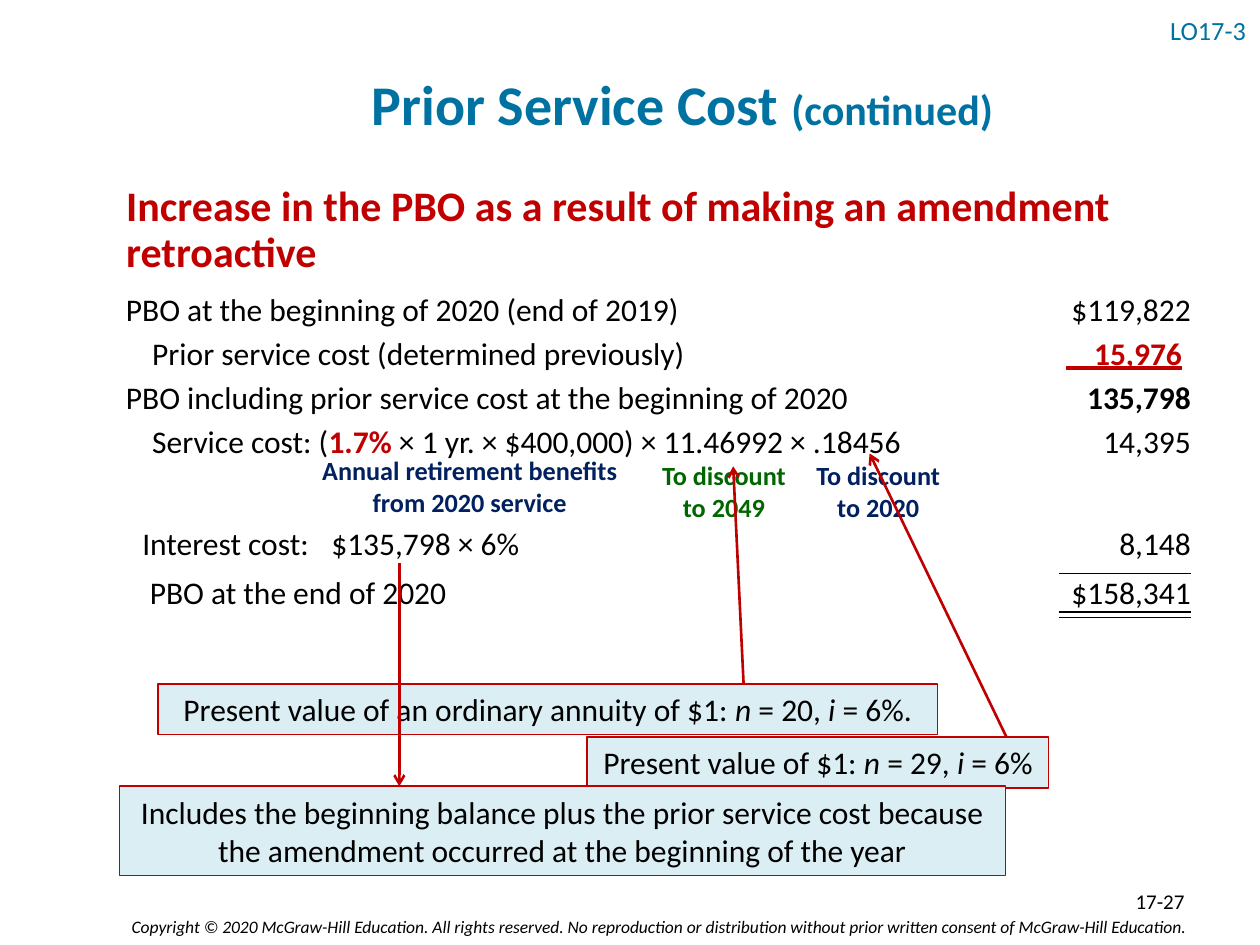
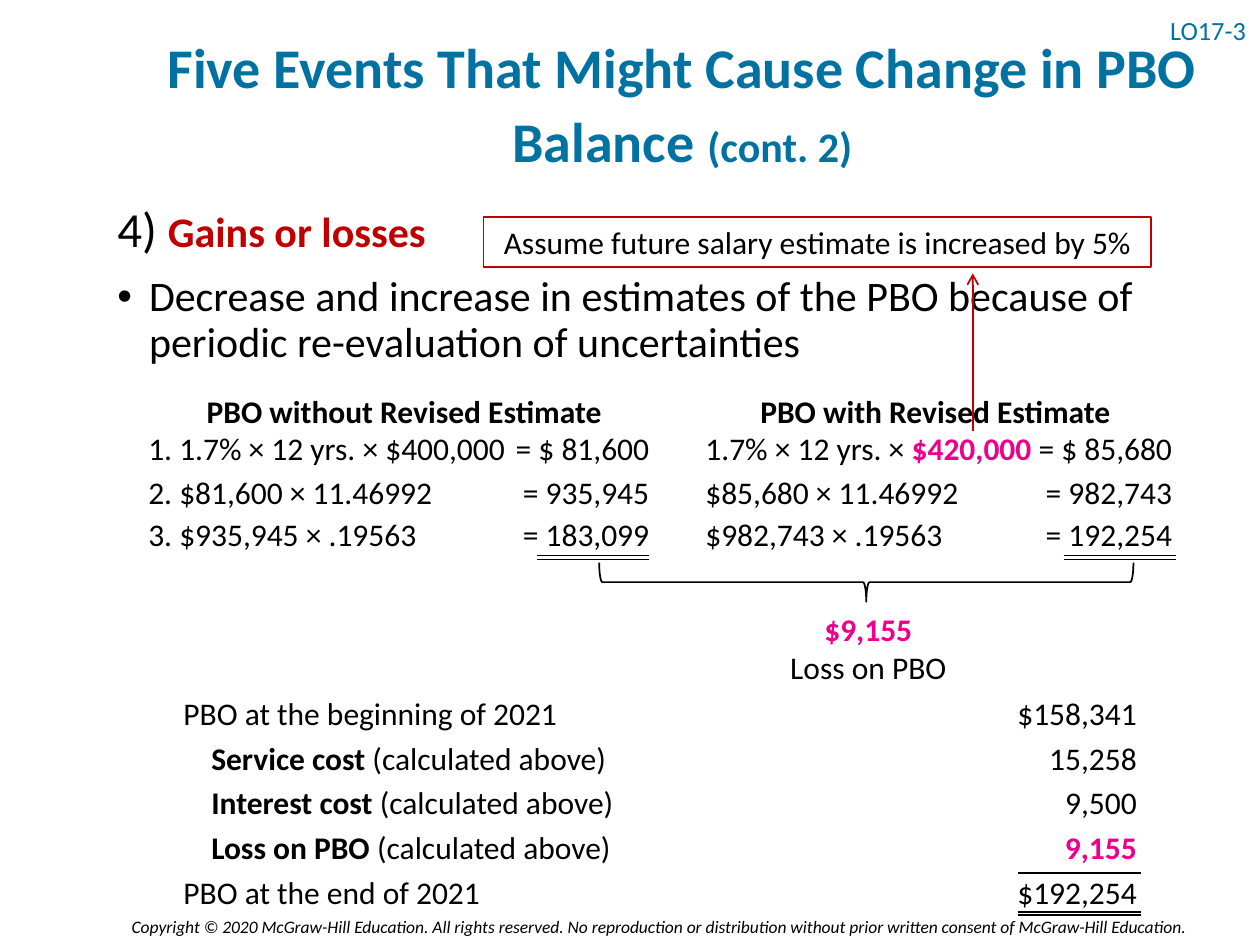
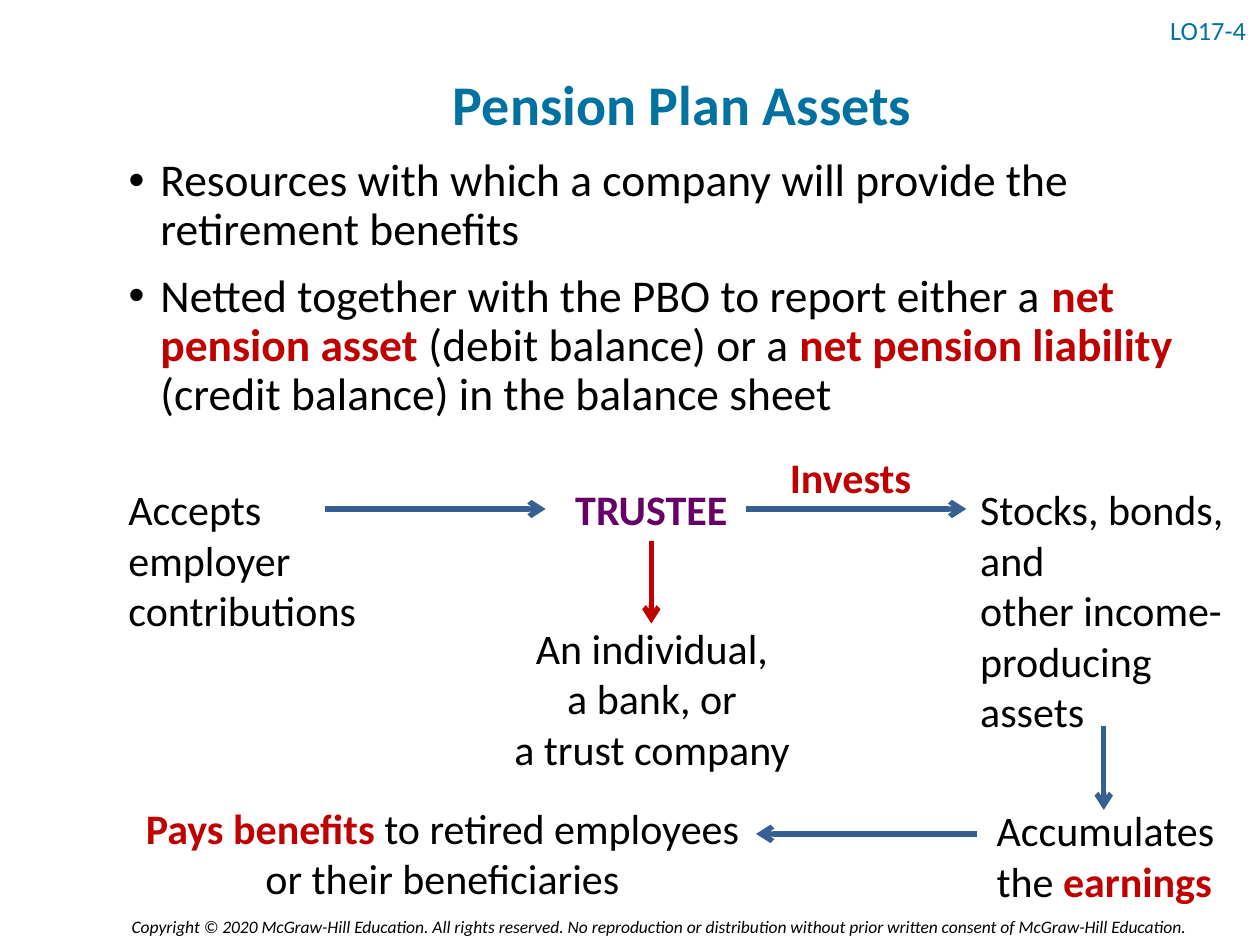
from typing import NamedTuple, Optional, Union

from pptx import Presentation
from pptx.dml.color import RGBColor
from pptx.enum.shapes import MSO_CONNECTOR, MSO_SHAPE
from pptx.enum.text import MSO_ANCHOR as Anchor, MSO_AUTO_SIZE as AutoSize, PP_ALIGN as Align
from pptx.oxml.ns import qn
from pptx.oxml.xmlchemy import OxmlElement
from pptx.util import Cm, Pt

BLACK = RGBColor(0x00, 0x00, 0x00)
TEAL = RGBColor(0x00, 0x72, 0xA2)
RED = RGBColor(0xC0, 0x00, 0x00)
NAVY = RGBColor(0x00, 0x20, 0x60)
GREEN = RGBColor(0x00, 0x66, 0x00)
PINK = RGBColor(0xEC, 0x00, 0x8C)
PURPLE = RGBColor(0x66, 0x00, 0x66)
BLUE = RGBColor(0x37, 0x60, 0x92)
PALE = RGBColor(0xDB, 0xEE, 0xF4)
FONT = "Calibri"
ROW_H = 1.02
AMOUNT_W = 3.43
COPYRIGHT = (
    "Copyright © 2020 McGraw-Hill Education. All rights reserved. No reproduction "
    "or distribution without prior written consent of McGraw-Hill Education."
)


class Box(NamedTuple):
    x: float
    y: float
    w: float
    h: float


class Run(NamedTuple):
    text: str
    color: Optional[RGBColor] = None
    bold: Optional[bool] = None
    italic: Optional[bool] = None
    size: Optional[float] = None


Para = Union[str, tuple]


class Row(NamedTuple):
    x: float
    y: float
    label: Para
    amount: str
    color: RGBColor = BLACK
    bold: bool = False
    shift: float = 0
    tab: Optional[float] = None


class Column(NamedTuple):
    heading: str
    heading_x: float
    heading_w: float
    x: float
    right: float
    rule_x: float
    steps: tuple


class Arrow(NamedTuple):
    x1: float
    y1: float
    x2: float
    y2: float
    color: RGBColor = BLUE


TITLE_BOX = Box(2.11, 0, 23.29, 4.01)
TAG_BOX = Box(23.34, 0.13, 2.06, ROW_H)
FOOTER_BOX = Box(1.14, 18.34, 23.01, 0.69)


def emu(box: Box) -> list:
    return [Cm(v) for v in box]


def place(sp, box: Box) -> None:
    sp.left, sp.top, sp.width, sp.height = emu(box)


def write(tf, *paras: Para, size: float = 18, color: RGBColor = BLACK, bold: bool = False,
          italic: bool = False, align=Align.LEFT, anchor=Anchor.TOP, spacing: float = 1.0,
          before: float = 0, wrap: bool = True, tab: Optional[float] = None) -> None:
    tf.auto_size = AutoSize.NONE
    tf.word_wrap = wrap
    tf.vertical_anchor = anchor
    for i, para in enumerate(paras):
        p = tf.paragraphs[0] if i == 0 else tf.add_paragraph()
        if tab:
            tabs = OxmlElement("a:tabLst")
            stop = OxmlElement("a:tab")
            stop.set("pos", str(Cm(tab)))
            stop.set("algn", "l")
            tabs.append(stop)
            p._p.get_or_add_pPr().append(tabs)
        p.alignment = align
        p.line_spacing = spacing
        p.space_before = Pt(before if i else 0)
        for part in (para,) if isinstance(para, str) else para:
            run = Run(part) if isinstance(part, str) else part
            r = p.add_run()
            r.text = run.text
            r.font.name = FONT
            r.font.size = Pt(run.size or size)
            r.font.bold = bold if run.bold is None else run.bold
            r.font.italic = italic if run.italic is None else run.italic
            r.font.color.rgb = run.color or color


def label(sl, box: Box, *paras: Para, **fmt):
    sp = sl.shapes.add_textbox(*emu(box))
    write(sp.text_frame, *paras, **fmt)
    return sp


def outlined(sl, kind, box: Box, color: RGBColor, fill: Optional[RGBColor] = None):
    sp = sl.shapes.add_shape(kind, *emu(box))
    sp.shadow.inherit = False
    if fill is None:
        sp.fill.background()
    else:
        sp.fill.solid()
        sp.fill.fore_color.rgb = fill
    sp.line.color.rgb = color
    sp.line.width = Pt(1)
    return sp


def callout(sl, box: Box, *paras: Para, fill: Optional[RGBColor] = None) -> None:
    sp = outlined(sl, MSO_SHAPE.RECTANGLE, box, RED, fill)
    write(sp.text_frame, *paras, align=Align.CENTER, anchor=Anchor.MIDDLE)


def line(sl, x1: float, y1: float, x2: float, y2: float, color: RGBColor = BLACK,
         width: float = 1, arrow: bool = False):
    c = sl.shapes.add_connector(MSO_CONNECTOR.STRAIGHT, Cm(x1), Cm(y1), Cm(x2), Cm(y2))
    c.line.color.rgb = color
    c.line.width = Pt(width)
    sp_pr = c.element.spPr
    if arrow:
        tail = OxmlElement("a:tailEnd")
        tail.set("type", "arrow")
        sp_pr.find(qn("a:ln")).append(tail)
    sp_pr.append(OxmlElement("a:effectLst"))
    return c


def rules(sl, x1: float, x2: float, *ys: float) -> None:
    for y in ys:
        line(sl, x1, y, x2, y)


def set_bullet(p, char: Optional[str]) -> None:
    pPr = p._p.get_or_add_pPr()
    hang = Cm(0.64) if char else 0
    pPr.set("marL", str(hang))
    pPr.set("indent", str(-hang))
    bu = OxmlElement("a:buChar" if char else "a:buNone")
    if char:
        bu.set("char", char)
    pPr.append(bu)


def body(sl, box: Box, *paras: Para, first_bullet: int = 0, **fmt) -> None:
    sp = sl.placeholders[1]
    place(sp, box)
    write(sp.text_frame, *paras, spacing=0.9, before=10, **fmt)
    for i, p in enumerate(sp.text_frame.paragraphs):
        set_bullet(p, "•" if i >= first_bullet else None)


def new_slide(prs, tag: str, *title):
    sl = prs.slides.add_slide(prs.slide_layouts[1])
    write(sl.shapes.title.text_frame, title, size=32, color=TEAL, bold=True,
          align=Align.CENTER, anchor=Anchor.MIDDLE, spacing=1.1)
    label(sl, TAG_BOX, tag, size=15, color=TEAL, anchor=Anchor.MIDDLE, spacing=0.9, wrap=False)
    return sl


def ledger(sl, rows: list, amount_x: float) -> None:
    for row in rows:
        label(sl, Box(row.x, row.y, 16.92, ROW_H), row.label, tab=row.tab)
        label(sl, Box(amount_x + row.shift, row.y, AMOUNT_W, ROW_H), row.amount,
              color=row.color, bold=row.bold, align=Align.RIGHT)


def present_value(lead: str, n: str, rate: str) -> tuple:
    return lead, Run("n", italic=True), f" = {n}, ", Run("i", italic=True), f" = {rate}"


def prior_service_cost(prs):
    sl = new_slide(prs, "LO17-3", "Prior Service Cost ", Run("(continued)", size=24))
    body(sl, Box(2.29, 3.61, 22.25, 14.05),
         "Increase in the PBO as a result of making an amendment retroactive",
         first_bullet=1, size=24, color=RED, bold=True)
    ledger(sl, [
        Row(2.29, 5.72, "PBO at the beginning of 2020 (end of 2019)", "$119,822"),
        Row(2.82, 6.6, "Prior service cost (determined previously)", "15,976", RED, True, -0.18),
        Row(2.29, 7.49, "PBO including prior service cost at the beginning of 2020",
            "135,798", bold=True),
        Row(2.82, 8.38, ("Service cost: (", Run("1.7% ", RED, True),
                         "× 1 yr. × $400,000) × 11.46992 × .18456"), "14,395"),
        Row(2.62, 10.44, "Interest cost:\t$135,798 × 6%", "8,148", tab=3.81),
        Row(2.77, 11.43, "PBO at the end of 2020", "$158,341"),
    ], 20.83)
    line(sl, 21.49, 7.42, 23.83, 7.42, RED, 2)
    rules(sl, 21.34, 24, 11.56, 12.34, 12.45)
    for x, y, w, color, paras in (
        (5.89, 9.04, 7.16, NAVY, ("Annual retirement benefits", "from 2020 service")),
        (12.37, 9.14, 4.45, GREEN, ("To discount", "to 2049")),
        (16.18, 9.14, 3.05, NAVY, ("To discount", "to 2020")),
    ):
        label(sl, Box(x, y, w, 1.55), *paras, size=15, color=color, bold=True, align=Align.CENTER)
    callout(sl, Box(3.18, 13.79, 15.72, ROW_H),
            present_value("Present value of an ordinary annuity of $1: ", "20", "6%."), fill=PALE)
    callout(sl, Box(11.84, 14.86, 9.3, ROW_H),
            present_value("Present value of $1: ", "29", "6%"), fill=PALE)
    callout(sl, Box(2.41, 15.85, 17.86, 1.8),
            "Includes the beginning balance plus the prior service cost because",
            "the amendment occurred at the beginning of the year", fill=PALE)
    for a in (
        Arrow(14.99, 13.79, 14.78, 9.4, RED),
        Arrow(20.29, 14.86, 17.53, 9.14, RED),
        Arrow(8.05, 11.35, 8.05, 15.85, RED),
    ):
        line(sl, *a, width=1.5, arrow=True)
    label(sl, Box(18.21, 17.65, 5.92, ROW_H), "17-27", size=12, align=Align.RIGHT,
          anchor=Anchor.MIDDLE)
    return sl


def five_events(prs) -> None:
    sl = new_slide(prs, "LO17-3", "Five Events That Might Cause Change in PBO Balance ",
                   Run("(cont. 2)", size=24))
    body(sl, Box(2.11, 4.01, 22.25, 14.05),
         (Run("4) ", size=28), Run("Gains or losses", RED, True)),
         "Decrease and increase in estimates of the PBO because of periodic "
         "re-evaluation of uncertainties",
         first_bullet=1, size=24)
    brace = outlined(sl, MSO_SHAPE.LEFT_BRACE, Box(17.07, 6.35, 0.79, 10.77), BLACK)
    brace.rotation = 270
    label(sl, Box(14.43, 12.17, 6.15, 1.8), (Run("$9,155", PINK, True),), "Loss on PBO",
          align=Align.CENTER)
    for col in (
        Column("PBO without Revised Estimate", 3.25, 9.8, 2.74, 13.34, 10.82, (
            ("1. 1.7% × 12 yrs. × $400,000", "= $ 81,600"),
            ("2. $81,600 × 11.46992", "= 935,945"),
            ("3. $935,945 × .19563", "= 183,099"),
        )),
        Column("PBO with Revised Estimate", 14.81, 8.1, 13.97, 23.88, 21.44, (
            (("1.7% × 12 yrs. × ", Run("$420,000", PINK, True)), "= $ 85,680"),
            ("$85,680 × 11.46992", "= 982,743"),
            ("$982,743 × .19563", "= 192,254"),
        )),
    ):
        label(sl, Box(col.heading_x, 7.77, col.heading_w, ROW_H), col.heading, bold=True,
              align=Align.CENTER)
        for y, (formula, result) in zip((8.53, 9.42, 10.26), col.steps):
            label(sl, Box(col.x, y, 8.46, ROW_H), formula)
            label(sl, Box(col.right - 3.58, y, 3.58, ROW_H), result, align=Align.RIGHT)
        rules(sl, col.rule_x, col.rule_x + 2.26, 11.2, 11.28)
    costs = [("Service cost ", "15,258", BLACK), ("Interest cost ", "9,500", BLACK),
             ("Loss on PBO ", "9,155", PINK)]
    ledger(sl, [
        Row(3.45, 13.87, "PBO at the beginning of 2021", "$158,341"),
        *(Row(4.01, 13.87 + 0.9 * i, (Run(name, bold=True), "(calculated above)"), amount,
              color, color == PINK)
          for i, (name, amount, color) in enumerate(costs, 1)),
        Row(3.45, 17.47, "PBO at the end of 2021", "$192,254"),
    ], 19.74)
    rules(sl, 20.52, 23.01, 17.6, 18.39, 18.44)
    line(sl, 19.61, 8.69, 19.61, 5.51, RED, arrow=True)
    callout(sl, Box(9.75, 4.37, 13.46, ROW_H), "Assume future salary estimate is increased by 5%")


def plan_assets(prs) -> None:
    sl = new_slide(prs, "LO17-4", "Pension Plan Assets")
    body(sl, Box(2.34, 3.05, 22.25, 14.05),
         "Resources with which a company will provide the retirement benefits",
         ("Netted together with the PBO to report either a ", Run("net pension asset ", RED, True),
          "(debit balance) or a ", Run("net pension liability ", RED, True),
          "(credit balance) in the balance sheet"),
         size=26)
    trustee = label(sl, Box(10.59, 9.63, 5.08, 1.27), "TRUSTEE", size=24, color=PURPLE,
                    bold=True, align=Align.CENTER)
    for box, align, paras in (
        (Box(9.78, 12.42, 6.73, 3.33), Align.CENTER,
         ("An individual,", "a bank, or", "a trust company")),
        (Box(2.34, 9.63, 5.21, 3.33), Align.LEFT, ("Accepts employer contributions",)),
        (Box(15.24, 8.97, 3.81, 1.27), Align.CENTER, ((Run("Invests", RED, True),),)),
        (Box(19.84, 16.1, 5.08, 2.31), Align.LEFT,
         (("Accumulates the ", Run("earnings", RED, True)),)),
        (Box(2.34, 16.05, 13.16, 2.31), Align.CENTER,
         ((Run("Pays benefits ", RED, True), "to retired employees or their beneficiaries"),)),
        (Box(19.51, 9.63, 5.69, 5.38), Align.LEFT,
         ("Stocks, bonds, and", "other income-producing assets")),
    ):
        label(sl, box, *paras, size=24, align=align)
    for a in (
        Arrow(6.55, 10.26, 11, 10.26),
        Arrow(15.04, 10.26, 19.48, 10.26),
        Arrow(22.25, 14.63, 22.25, 16.33),
        Arrow(19.69, 16.81, 15.24, 16.81),
    ):
        line(sl, *a, width=3, arrow=True)
    down = line(sl, 13.13, 10.9, 13.13, 12.57, RED, 3, arrow=True)
    down.begin_connect(trustee, 2)


def main() -> None:
    prs = Presentation()
    prs.slide_width, prs.slide_height = Cm(25.4), Cm(19.05)
    place(prs.slide_layouts[1].placeholders[0], TITLE_BOX)
    sl = prior_service_cost(prs)
    footer = label(sl, FOOTER_BOX, COPYRIGHT, size=10, italic=True, align=Align.RIGHT)
    footer.element.nvSpPr.cNvPr.set("id", "20")
    prs.slide_master.shapes.element.append(footer.element)
    five_events(prs)
    plan_assets(prs)
    prs.save("out.pptx")


if __name__ == "__main__":
    main()
